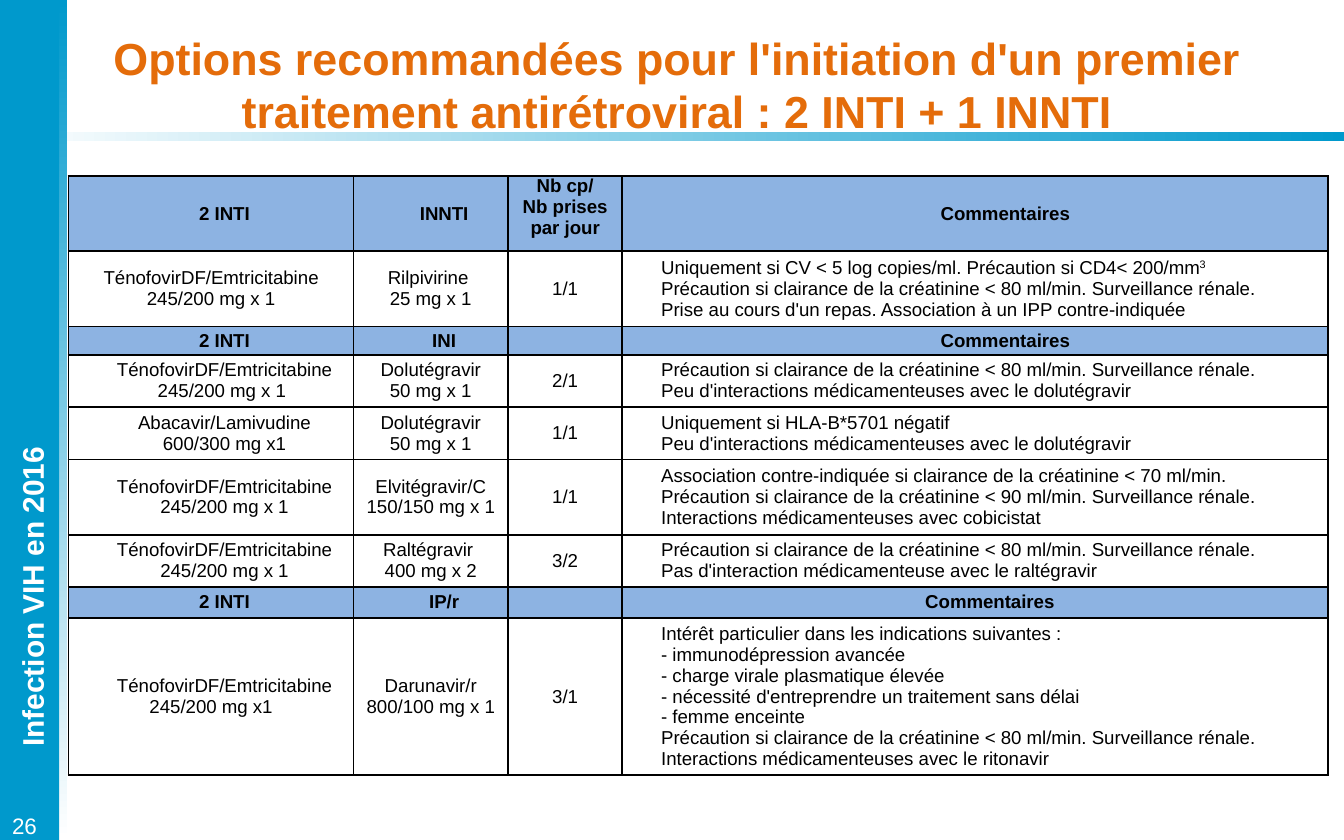
from lxml import etree
from pptx import Presentation
from pptx.dml.color import RGBColor
from pptx.enum.shapes import MSO_SHAPE
from pptx.enum.text import MSO_ANCHOR, MSO_AUTO_SIZE, PP_ALIGN
from pptx.oxml.ns import qn
from pptx.util import Emu, Pt

RECTANGLE = MSO_SHAPE.RECTANGLE
TOP, MIDDLE = MSO_ANCHOR.TOP, MSO_ANCHOR.MIDDLE
LEFT, CENTER = PP_ALIGN.LEFT, PP_ALIGN.CENTER
NO_AUTOFIT = MSO_AUTO_SIZE.NONE

PX = 9144
BLUE, WHITE, BLACK = "0099CC", "FFFFFF", "000000"
ORANGE, HEADER_BLUE = "E46C0A", "8DB3E2"

TITLE = ("Options recommandées pour l'initiation d'un premier "
         "traitement antirétroviral : 2 INTI + 1 INNTI")
SIDE_LABEL = "Infection VIH en 2016"
PAGE_NUMBER = "26"

TENOFOVIR = "TénofovirDF/Emtricitabine"
DOSE = "245/200 mg x 1"
CLEARANCE_80 = "Précaution si clairance de la créatinine < 80 ml/min. Surveillance rénale."
FEW_INTERACTIONS = "Peu d'interactions médicamenteuses avec le dolutégravir"

# (height, is header, cells); each cell is a list of paragraphs
ROWS = [
    (56, True, [["2 INTI"], ["INNTI"], ["Nb cp/\nNb prises par jour"], ["Commentaires"]]),
    (56, False, [[TENOFOVIR + " " + DOSE], ["Rilpivirine ", "25 mg x 1"], ["1/1"], [
        "Uniquement si CV < 5 log copies/ml. Précaution si CD4< 200/mm^3",
        CLEARANCE_80,
        "Prise au cours d'un repas. Association à un IPP contre-indiquée"]]),
    (21, True, [["2 INTI"], ["INI"], [""], ["Commentaires"]]),
    (39, False, [[TENOFOVIR, DOSE + " "], ["Dolutégravir", "50 mg x 1"], ["2/1"], [
        CLEARANCE_80, FEW_INTERACTIONS]]),
    (39, False, [["Abacavir/Lamivudine", "600/300 mg x1"], ["Dolutégravir\n50 mg x 1"], ["1/1"], [
        "Uniquement si HLA-B*5701 négatif", FEW_INTERACTIONS]]),
    (56, False, [[TENOFOVIR, DOSE], ["Elvitégravir/C\n150/150 mg x 1"], ["1/1"], [
        "Association contre-indiquée si clairance de la créatinine < 70 ml/min.",
        "Précaution si clairance de la créatinine < 90 ml/min. Surveillance rénale.",
        "Interactions médicamenteuses avec cobicistat"]]),
    (39, False, [[TENOFOVIR, DOSE], ["Raltégravir \n400 mg x 2"], ["3/2"], [
        CLEARANCE_80, "Pas d'interaction médicamenteuse avec le raltégravir"]]),
    (23, True, [["2 INTI"], ["IP/r"], [""], ["Commentaires"]]),
    (117, False, [[TENOFOVIR + " 245/200 mg x1"], ["Darunavir/r 800/100 mg x 1"], ["3/1"], [
        "Intérêt particulier dans les indications suivantes :",
        "- immunodépression avancée",
        "- charge virale plasmatique élevée",
        "- nécessité d'entreprendre un traitement sans délai",
        "- femme enceinte",
        CLEARANCE_80,
        "Interactions médicamenteuses avec le ritonavir"]]),
]
COLUMN_WIDTHS = [212, 115, 85, 525]
TABLE_LEFT, TABLE_TOP = 51, 131
HEADER_INDENTS = [(0, 20), (0, 20), (0, 0), (25, 20)]
BODY_INDENTS = [(0, 20), (0, 0), (2, -2), (2, 20)]
SPECIAL_INDENTS = {(1, 0): (0, 0), (7, 3): (2, 20)}


def px(*lengths):
    return [Emu(length * PX) for length in lengths]


def rgb(color):
    return RGBColor.from_string(color)


def apply(target, formats):
    for name, value in formats.items():
        setattr(target, name, value)


def style_runs(paragraph, size, color, bold=False):
    for run in paragraph.runs:
        apply(run.font, {"name": "Arial", "size": Pt(size), "bold": bold})
        run.font.color.rgb = rgb(color)


def add_bar(box, colors, angle=0):
    bar = slide.shapes.add_shape(RECTANGLE, *px(*box))
    bar.shadow.inherit = False
    bar.line.fill.background()
    if len(colors) == 1:
        bar.fill.solid()
        bar.fill.fore_color.rgb = rgb(colors[0])
        return
    bar.fill.gradient()
    bar.fill.gradient_angle = angle
    for stop, color, position in zip(bar.fill.gradient_stops, colors, (0, 1)):
        stop.color.rgb = rgb(color)
        stop.position = position


def write_frame(shape, text, size, color, bold, align, **formats):
    left, top = px(9, 4)
    apply(shape.text_frame, {"margin_left": left, "margin_right": left, "margin_top": top,
                             "margin_bottom": top, "auto_size": NO_AUTOFIT,
                             "word_wrap": True, **formats})
    paragraph = shape.text_frame.paragraphs[0]
    paragraph.text = text
    paragraph.alignment = align
    style_runs(paragraph, size, color, bold)


def write_line(paragraph, text, align, indent, bold):
    base, _, superscript = text.partition("^")
    paragraph.text = base
    if superscript:
        raised = paragraph.add_run()
        raised.text = superscript
        raised.font._element.set("baseline", "30000")
    paragraph.alignment = align
    style_runs(paragraph, 10, BLACK, bold)
    for line_break in paragraph._p.findall(qn("a:br")):
        etree.SubElement(line_break, qn("a:rPr"), sz="1000")
    if not text:
        etree.SubElement(paragraph._p, qn("a:endParaRPr"), sz="1000")
    margin, first = px(*indent)
    properties = paragraph._p.get_or_add_pPr()
    properties.set("marL", str(margin))
    properties.set("indent", str(first))


def draw_borders(cell):
    properties = cell._tc.get_or_add_tcPr()
    for index, side in enumerate(("lnL", "lnR", "lnT", "lnB")):
        border = etree.Element(qn("a:" + side), w=str(Pt(1)))
        fill = etree.SubElement(border, qn("a:solidFill"))
        etree.SubElement(fill, qn("a:srgbClr"), val=BLACK)
        properties.insert(index, border)


def fill_cell(cell, lines, header, align, anchor, indent):
    side, = px(7)
    apply(cell, {"margin_left": side, "margin_right": side, "margin_top": 0,
                 "margin_bottom": 0, "vertical_anchor": anchor})
    if header:
        cell.fill.solid()
        cell.fill.fore_color.rgb = rgb(HEADER_BLUE)
    else:
        cell.fill.background()
    draw_borders(cell)
    for number, line in enumerate(lines):
        frame = cell.text_frame
        paragraph = frame.add_paragraph() if number else frame.paragraphs[0]
        write_line(paragraph, line, align, indent, header)


deck = Presentation()
deck.slide_width, deck.slide_height = px(1000, 625)
slide = deck.slides.add_slide(deck.slide_layouts[5])

add_bar((0, 98, 1000, 7), (WHITE, BLUE))
add_bar((6, 0, 44, 625), (BLUE, WHITE), 270)
add_bar((0, 0, 44, 625), (BLUE,))

side_label = slide.shapes.add_textbox(*px(-97, 426, 243, 36))
side_label.rotation = 270
write_frame(side_label, SIDE_LABEL, 16, WHITE, True, CENTER, word_wrap=False)
page_number = slide.shapes.add_textbox(*px(0, 600, 56, 29))
write_frame(page_number, PAGE_NUMBER, 12, WHITE, False, LEFT)

title = slide.shapes.title
apply(title, dict(zip(("left", "top", "width", "height"), px(27, 17, 953, 91))))
write_frame(title, TITLE, 24, ORANGE, True, CENTER, vertical_anchor=MIDDLE)
slide.shapes._spTree.append(title._element)

heights = [height for height, _, _ in ROWS]
options = slide.shapes.add_table(
    len(ROWS), len(COLUMN_WIDTHS),
    *px(TABLE_LEFT, TABLE_TOP, sum(COLUMN_WIDTHS), sum(heights))).table
apply(options, {"first_row": False, "horz_banding": False})
for column, width in zip(options.columns, px(*COLUMN_WIDTHS)):
    column.width = width
for row, height in zip(options.rows, px(*heights)):
    row.height = height
for r, (_, header, cells) in enumerate(ROWS):
    indents = HEADER_INDENTS if header else BODY_INDENTS
    for c, lines in enumerate(cells):
        align = LEFT if c == 3 and not header else CENTER
        anchor = TOP if (r, c) == (0, 2) else MIDDLE
        indent = SPECIAL_INDENTS.get((r, c), indents[c])
        fill_cell(options.cell(r, c), lines, header, align, anchor, indent)

deck.save("out.pptx")
